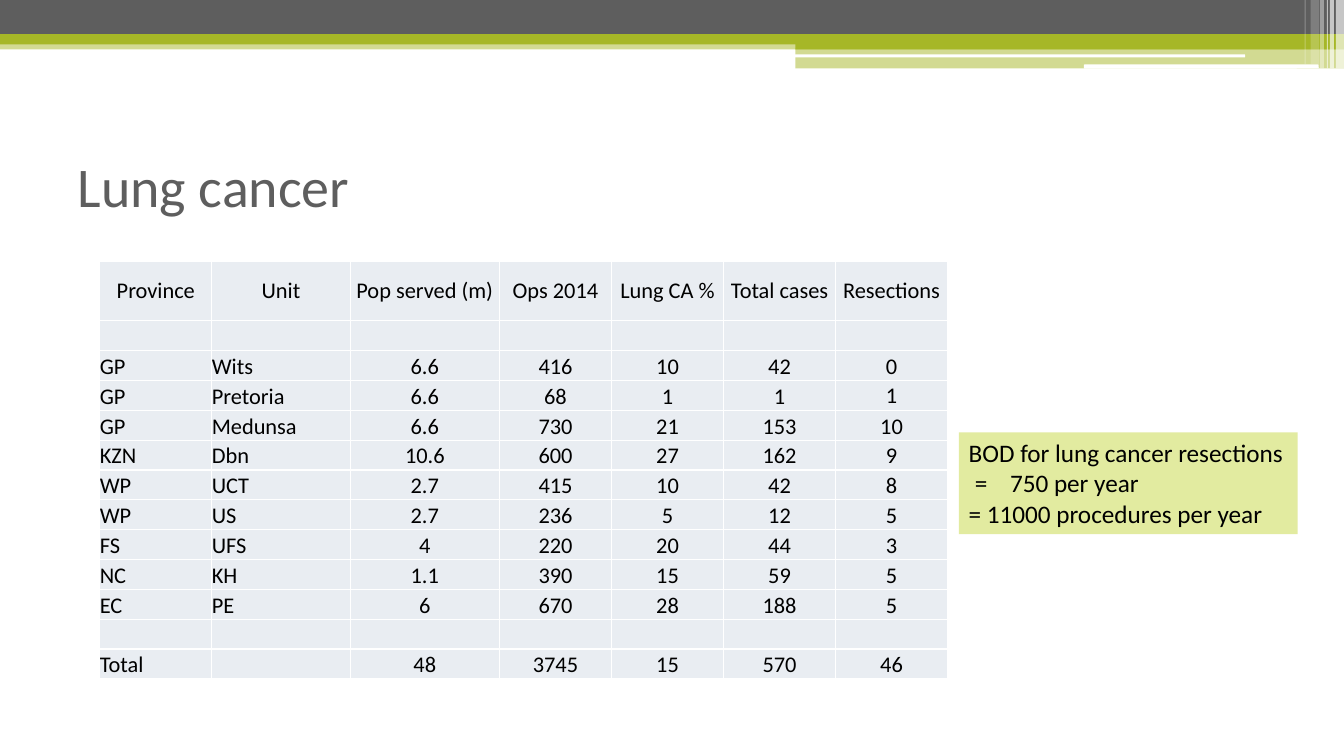
from lxml import etree
from pptx import Presentation
from pptx.dml.color import RGBColor
from pptx.enum.shapes import MSO_SHAPE as Shape
from pptx.enum.text import MSO_ANCHOR as Anchor, PP_ALIGN as Align
from pptx.oxml.ns import qn
from pptx.util import Inches, Pt

GREY = RGBColor(0x5E, 0x5E, 0x5E)
GREEN = RGBColor(0xA6, 0xB7, 0x27)
PALE_GREEN = RGBColor(0xE2, 0xEB, 0xA0)
CELL_BLUE = RGBColor(0xE9, 0xED, 0xF2)
WHITE = RGBColor(0xFF, 0xFF, 0xFF)
BLACK = RGBColor(0, 0, 0)

COLUMN_WIDTHS = [1.11, 1.37, 1.48, 1.11, 1.11, 1.11, 1.11]
BLANK_ROW = [""] * len(COLUMN_WIDTHS)
ROWS = [
    ["Province", "Unit", "Pop served (m)", "Ops 2014", "Lung CA %", "Total cases", "Resections"],
    BLANK_ROW,
    ["GP", "Wits", "6.6", "416", "10", "42", "0"],
    ["GP", "Pretoria", "6.6", "68", "1", "1", "1"],
    ["GP", "Medunsa", "6.6", "730", "21", "153", "10"],
    ["KZN", "Dbn", "10.6", "600", "27", "162", "9"],
    ["WP", "UCT", "2.7", "415", "10", "42", "8"],
    ["WP", "US", "2.7", "236", "5", "12", "5"],
    ["FS", "UFS", "4", "220", "20", "44", "3"],
    ["NC", "KH", "1.1", "390", "15", "59", "5"],
    ["EC", "PE", "6", "670", "28", "188", "5"],
    BLANK_ROW,
    ["Total", "", "48", "3745", "15", "570", "46"],
]
PRETORIA_RESECTIONS = (3, 6)  # the one body cell that is centred vertically


def write(paragraph, text, size=16, color=BLACK, align=Align.LEFT):
    paragraph.text = text
    paragraph.alignment = align
    paragraph.font.size = Pt(size)
    paragraph.font.name = "Calibri"
    paragraph.font.color.rgb = color


def add_block(slide, left, top, width, height, color, opacity=100, kind=Shape.RECTANGLE):
    block = slide.shapes.add_shape(kind, Inches(left), Inches(top), Inches(width), Inches(height))
    block.shadow.inherit = False
    block.fill.solid()
    block.fill.fore_color.rgb = color
    block.line.fill.background()
    if opacity < 100:
        color_element = block.fill._xPr.find(".//" + qn("a:srgbClr"))
        etree.SubElement(color_element, qn("a:alpha"), val=str(opacity * 1000))
    return block


def add_header_band(slide, left, top, width):
    right = left + width
    # Full-width bars
    add_block(slide, left, top + 0.4, width, 0.09, GREEN, 50)
    add_block(slide, left, top, width, 0.34, GREY)
    add_block(slide, left, top + 0.34, width, 0.1, GREEN)
    # Stepped bars on the right
    add_block(slide, right - 5.44, top + 0.39, 5.44, 0.1, GREEN)
    add_block(slide, right - 5.44, top + 0.48, 5.44, 0.2, GREEN, 50)
    add_block(slide, right - 5.45, top + 0.54, 4.47, 0.03, WHITE, kind=Shape.ROUNDED_RECTANGLE)
    add_block(slide, right - 2.58, top + 0.64, 2.33, 0.04, WHITE, kind=Shape.ROUNDED_RECTANGLE)
    # Translucent stripes: distance from the right edge, width, height, opacity
    for offset, stripe_width, height, opacity in [
        (0.08, 0.08, 0.68, 65), (0.14, 0.04, 0.68, 65), (0.17, 0.01, 0.68, 60),
        (0.24, 0.04, 0.68, 40), (0.33, 0.08, 0.64, 20), (0.39, 0.01, 0.64, 30),
    ]:
        add_block(slide, right - offset, top, stripe_width, height, WHITE, opacity)


def set_title(slide, left, top, width, height):
    title = slide.shapes.title
    title.left, title.top = Inches(left), Inches(top)
    title.width, title.height = Inches(width), Inches(height)
    title.text_frame.vertical_anchor = Anchor.MIDDLE
    write(title.text_frame.paragraphs[0], "Lung cancer", size=40, color=GREY)


def add_borders(cell):
    properties = cell._tc.get_or_add_tcPr()
    for index, side in enumerate(("a:lnL", "a:lnR", "a:lnT", "a:lnB")):
        line = etree.Element(qn(side), w=str(Pt(1)))
        fill = etree.SubElement(line, qn("a:solidFill"))
        etree.SubElement(fill, qn("a:srgbClr"), val=str(WHITE))
        properties.insert(index, line)


def format_cell(cell, text, anchor, align):
    cell.margin_left = cell.margin_right = cell.margin_top = cell.margin_bottom = 0
    cell.vertical_anchor = anchor
    cell.fill.solid()
    cell.fill.fore_color.rgb = CELL_BLUE
    add_borders(cell)
    write(cell.text_frame.paragraphs[0], text, align=align)


def add_units_table(slide, left, top, width, height):
    frame = slide.shapes.add_table(len(ROWS), len(COLUMN_WIDTHS), Inches(left), Inches(top),
                                   Inches(width), Inches(height))
    table = frame.table
    table.first_row = table.horz_banding = False
    for column, share in zip(table.columns, COLUMN_WIDTHS):
        column.width = Inches(width * share / sum(COLUMN_WIDTHS))
    # The heading row is twice as tall as the others
    row_height = height / (len(ROWS) + 1)
    for row_index, values in enumerate(ROWS):
        is_heading = row_index == 0
        table.rows[row_index].height = Inches(row_height * (2 if is_heading else 1))
        for column_index, text in enumerate(values):
            is_middle = is_heading or (row_index, column_index) == PRETORIA_RESECTIONS
            is_centred = is_heading or column_index > 1
            format_cell(table.cell(row_index, column_index), text,
                        Anchor.MIDDLE if is_middle else Anchor.BOTTOM,
                        Align.CENTER if is_centred else Align.LEFT)


def add_burden_note(slide, left, top, width, height):
    note = add_block(slide, left, top, width, height, PALE_GREEN)
    text_frame = note.text_frame
    text_frame.word_wrap = False
    text_frame.vertical_anchor = Anchor.TOP
    lines = ["BOD for lung cancer resections", "=\t750 per year", "= 11000 procedures per year"]
    for index, line in enumerate(lines):
        paragraph = text_frame.add_paragraph() if index else text_frame.paragraphs[0]
        write(paragraph, line, size=18)
    # Hanging indent: the tab carries the figure to the margin
    indent = text_frame.paragraphs[1]._p.get_or_add_pPr()
    indent.set("marL", str(Inches(0.41)))
    indent.set("indent", str(Inches(-0.35)))


def main():
    presentation = Presentation()
    presentation.slide_width, presentation.slide_height = Inches(13.33), Inches(7.5)
    slide = presentation.slides.add_slide(presentation.slide_layouts[5])
    add_header_band(slide, 0, 0, 13.33)
    set_title(slide, 0.67, 1.25, 12, 1.17)
    add_units_table(slide, 0.99, 2.59, 8.41, 4.15)
    add_burden_note(slide, 9.51, 4.29, 3.36, 1.01)
    presentation.save("out.pptx")


if __name__ == "__main__":
    main()
